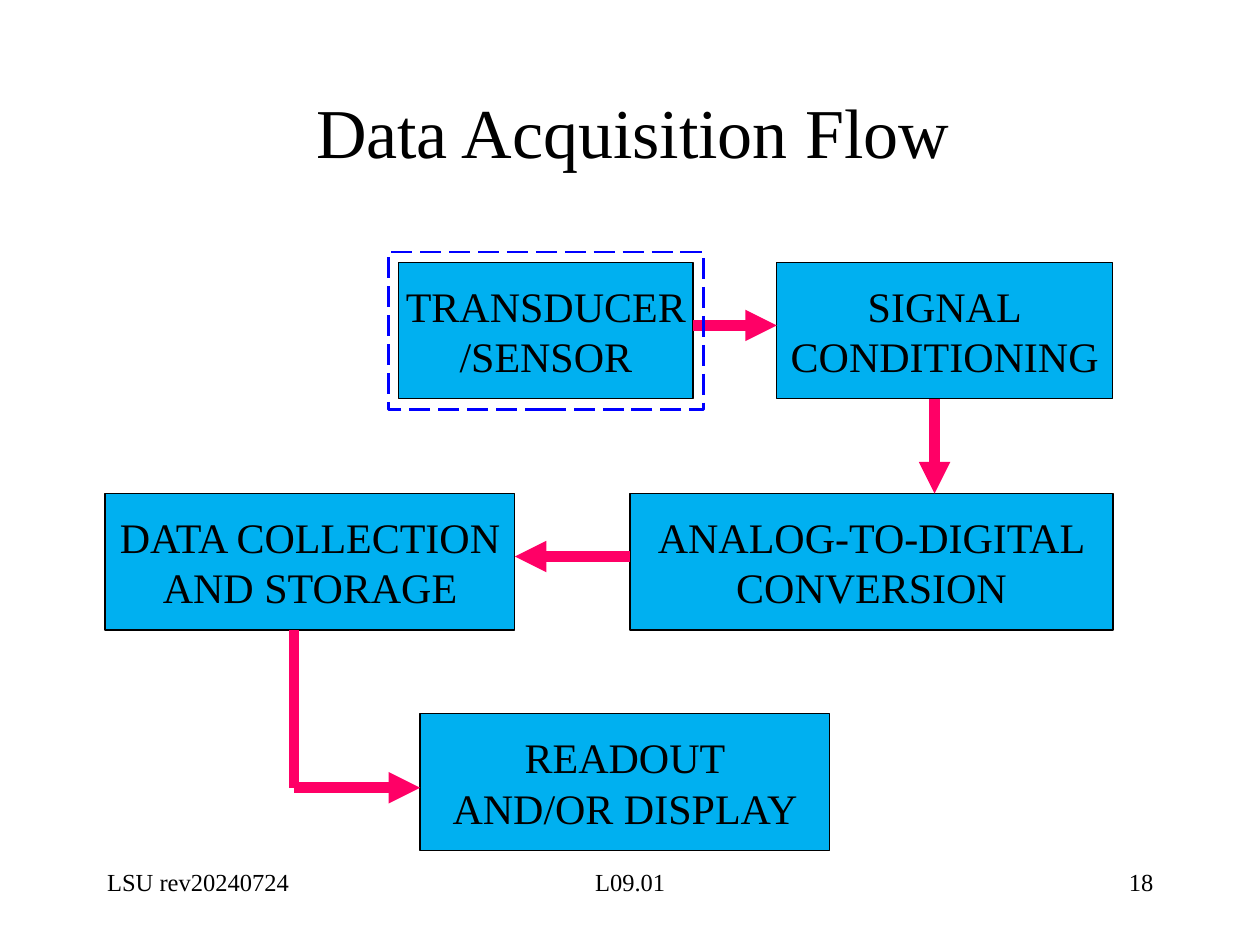
from lxml import etree
from pptx import Presentation
from pptx.dml.color import RGBColor
from pptx.enum.dml import MSO_LINE
from pptx.enum.shapes import MSO_CONNECTOR, MSO_SHAPE
from pptx.enum.text import MSO_ANCHOR, PP_ALIGN
from pptx.oxml.ns import qn
from pptx.util import Cm, Pt

RECT, LINE, DASH = MSO_SHAPE.RECTANGLE, MSO_CONNECTOR.STRAIGHT, MSO_LINE.LONG_DASH
LEFT, MID, RIGHT = PP_ALIGN.LEFT, PP_ALIGN.CENTER, PP_ALIGN.RIGHT
TOP, CENTRE = MSO_ANCHOR.TOP, MSO_ANCHOR.MIDDLE

BLACK, SKY, PINK, BLUE = "000000", "00B0F0", "FF0066", "0000FF"
HIGH = 2.75  # height of every stage

# Stages of the flow: x, y, width, lines of text
STAGES = [
    (5.92, 0.21, 5.93, ["TRANSDUCER", "/SENSOR"]),
    (13.54, 0.21, 6.77, ["SIGNAL", "CONDITIONING"]),
    (10.58, 4.87, 9.74, ["ANALOG-TO-DIGITAL", "CONVERSION"]),
    (0, 4.87, 8.26, ["DATA COLLECTION", "AND STORAGE"]),
    (6.35, 9.31, 8.26, ["READOUT", "AND/OR DISPLAY"]),
]
# Links: start x, y, end x, y, arrowhead
LINKS = [
    (11.85, 1.48, 13.54, 1.48, True),
    (16.72, 2.96, 16.72, 4.87, True),
    (10.58, 6.14, 8.26, 6.14, True),
    (3.81, 7.62, 3.81, 10.8, False),
    (3.81, 10.8, 6.35, 10.8, True),
]


def tint(code):
    return RGBColor.from_string(code)


def write(shape, lines, size, align, anchor, wrap=True):
    frame = shape.text_frame
    frame.word_wrap = wrap
    frame.vertical_anchor = anchor
    frame.text = "\n".join(lines)
    style = {"name": "Times New Roman", "size": Pt(size)}
    for para in frame.paragraphs:
        para.alignment = align
        for run in para.runs:
            for key, value in style.items():
                setattr(run.font, key, value)
            run.font.color.rgb = tint(BLACK)


def label(slide, box, text, size, align, anchor=TOP):
    shape = slide.shapes.add_textbox(*map(Cm, box))
    write(shape, [text], size, align, anchor)


def block(slide, box, edge, width, fill=None):
    shape = slide.shapes.add_shape(RECT, *map(Cm, box))
    shape.shadow.inherit = False
    if fill:
        shape.fill.solid()
        shape.fill.fore_color.rgb = tint(fill)
    else:
        shape.fill.background()
    shape.line.color.rgb = tint(edge)
    shape.line.width = Pt(width)
    return shape


def link(slide, ends, head):
    wire = slide.shapes.add_connector(LINE, *map(Cm, ends))
    wire.line.color.rgb = tint(PINK)
    wire.line.width = Pt(6)
    if head:
        tip = etree.SubElement(wire.line._get_or_add_ln(), qn("a:tailEnd"))
        tip.set("type", "triangle")
    etree.SubElement(wire._element.spPr, qn("a:effectLst"))


def title(slide, box):
    label(slide, box, "Data Acquisition Flow", 40, MID, CENTRE)


def flow(slide, left, top):
    # Stages
    for x, y, wide, lines in STAGES:
        shape = block(slide, (left + x, top + y, wide, HIGH), BLACK, 0.75, SKY)
        write(shape, lines, 24, MID, CENTRE, wrap=False)

    # Arrows
    for *ends, head in LINKS:
        x1, y1, x2, y2 = ends
        link(slide, (left + x1, top + y1, left + x2, top + y2), head)

    # Dashed frame around the sensor
    frame = block(slide, (left + 5.71, top, 6.35, 3.18), BLUE, 1.5)
    frame.line.dash_style = DASH


def footer(slide, left, top, width, height):
    parts = [
        ("LSU rev20240724", 5.29, 0, LEFT),
        ("L09.01", 8.04, 0.5, MID),
        ("18", 5.29, 1, RIGHT),
    ]
    for text, wide, share, align in parts:
        x = left + (width - wide) * share
        label(slide, (x, top, wide, height), text, 14, align)


def main():
    deck = Presentation()
    deck.slide_width, deck.slide_height = Cm(25.4), Cm(19.05)
    slide = deck.slides.add_slide(deck.slide_layouts[6])
    title(slide, (1.96, 1.47, 21.59, 2.34))
    flow(slide, 2.12, 5.08)
    footer(slide, 1.91, 17.36, 21.59, 1.27)
    deck.save("out.pptx")


if __name__ == "__main__":
    main()
